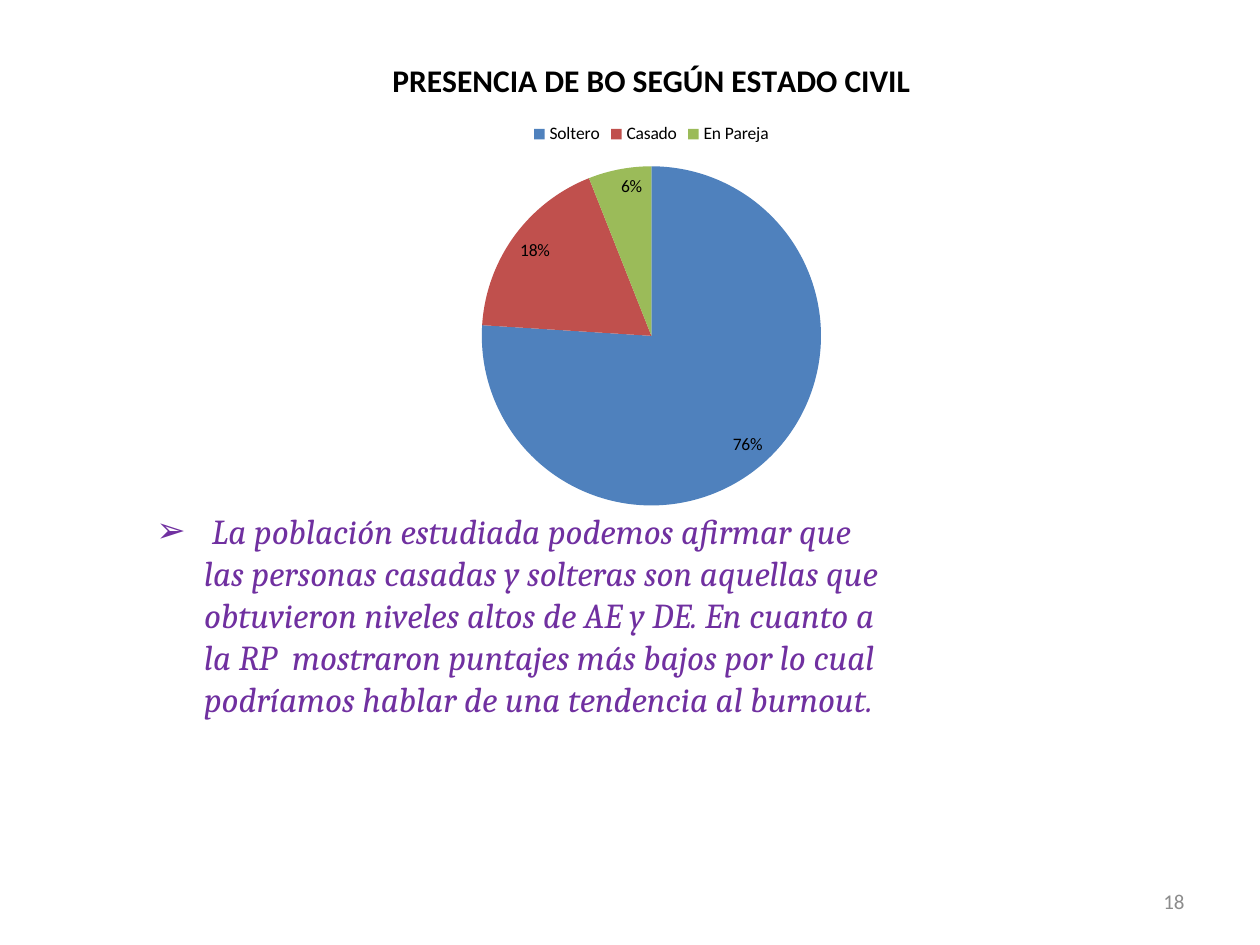
import pptx
import pptx.chart.data
import pptx.dml.color
import pptx.enum.chart
import pptx.enum.text
import pptx.oxml
import pptx.oxml.ns
import pptx.util

Inches = pptx.util.Inches


def paint(fill, tone):
    """Fill with one solid colour given as a hex string."""
    fill.solid()
    fill.fore_color.rgb = pptx.dml.color.RGBColor.from_string(tone)


def style(font, size, tone, face="Calibri", bold=False, slant=False):
    """Set the face, size, colour and slope of a font."""
    font.name = face
    font.size = pptx.util.Pt(size)
    font.bold = bold
    font.italic = slant
    paint(font.fill, tone)


def put_note(slide, box):
    """Write the bulleted finding in the body placeholder."""
    body = slide.placeholders[1]
    body.left, body.top, body.width, body.height = map(Inches, box)
    frame = body.text_frame
    frame.word_wrap = True
    frame.auto_size = pptx.enum.text.MSO_AUTO_SIZE.NONE
    para = frame.paragraphs[0]
    run = para.add_run()
    run.text = (
        " La población estudiada podemos afirmar que las personas casadas y "
        "solteras son aquellas que obtuvieron niveles altos de AE y DE. "
        "En cuanto a la RP  mostraron puntajes más bajos por lo cual "
        "podríamos hablar de una tendencia al burnout."
    )
    style(run.font, 20, "7030A0", "Cambria", slant=True)
    props = para._p.get_or_add_pPr()
    props.set("marL", str(Inches(0.38)))
    props.set("indent", str(-Inches(0.38)))
    space = pptx.oxml.ns.nsdecls("a")
    for xml in (
        f'<a:buFont {space} typeface="Wingdings"/>',
        f'<a:buChar {space} char="➢"/>',
    ):
        props.append(pptx.oxml.parse_xml(xml.replace("Wingdings", "Arial")))


def put_page(slide, box):
    """Write the page number at the lower right."""
    frame = slide.shapes.add_textbox(*map(Inches, box)).text_frame
    frame.word_wrap = True
    frame.vertical_anchor = pptx.enum.text.MSO_ANCHOR.MIDDLE
    para = frame.paragraphs[0]
    para.alignment = pptx.enum.text.PP_ALIGN.RIGHT
    run = para.add_run()
    run.text = "18"
    style(run.font, 12, "8C8C8C")


def put_pie(slide, box):
    """Draw the pie of marital status with title, legend and shares."""
    data = pptx.chart.data.CategoryChartData()
    data.categories = ["Soltero", "Casado", "En Pareja"]
    data.add_series("Series 1", (76, 18, 6))
    kind = pptx.enum.chart.XL_CHART_TYPE.PIE
    chart = slide.shapes.add_chart(kind, *map(Inches, box), data).chart
    style(chart.font, 10, "000000")

    chart.has_title = True
    run = chart.chart_title.text_frame.paragraphs[0].add_run()
    run.text = "PRESENCIA DE BO SEGÚN ESTADO CIVIL"
    style(run.font, 18, "000000", bold=True)
    chart.has_legend = True
    chart.legend.position = pptx.enum.chart.XL_LEGEND_POSITION.TOP
    chart.legend.include_in_layout = False

    plot = chart.plots[0]
    plot.vary_by_categories = True
    for spot, tone in enumerate(("4F81BD", "C0504D", "9BBB59")):
        paint(plot.series[0].points[spot].format.fill, tone)
    plot.has_data_labels = True
    tags = plot.data_labels
    tags.show_percentage = True
    tags.show_value = False
    tags.number_format = "0%"
    tags.number_format_is_linked = False
    tags.position = pptx.enum.chart.XL_LABEL_POSITION.INSIDE_END
    style(tags.font, 10, "000000")


def main():
    """Build the slide and save it."""
    deck = pptx.Presentation()
    deck.slide_width, deck.slide_height = Inches(10), Inches(7.5)
    slide = deck.slides.add_slide(deck.slide_layouts[1])
    head = slide.shapes.title.element
    head.getparent().remove(head)
    put_note(slide, (1.14, 3.99, 6, 1.98))
    put_page(slide, (7.17, 6.95, 2.33, 0.4))
    put_pie(slide, (2.17, 0.29, 6, 3.86))
    deck.save("out.pptx")


if __name__ == "__main__":
    main()
